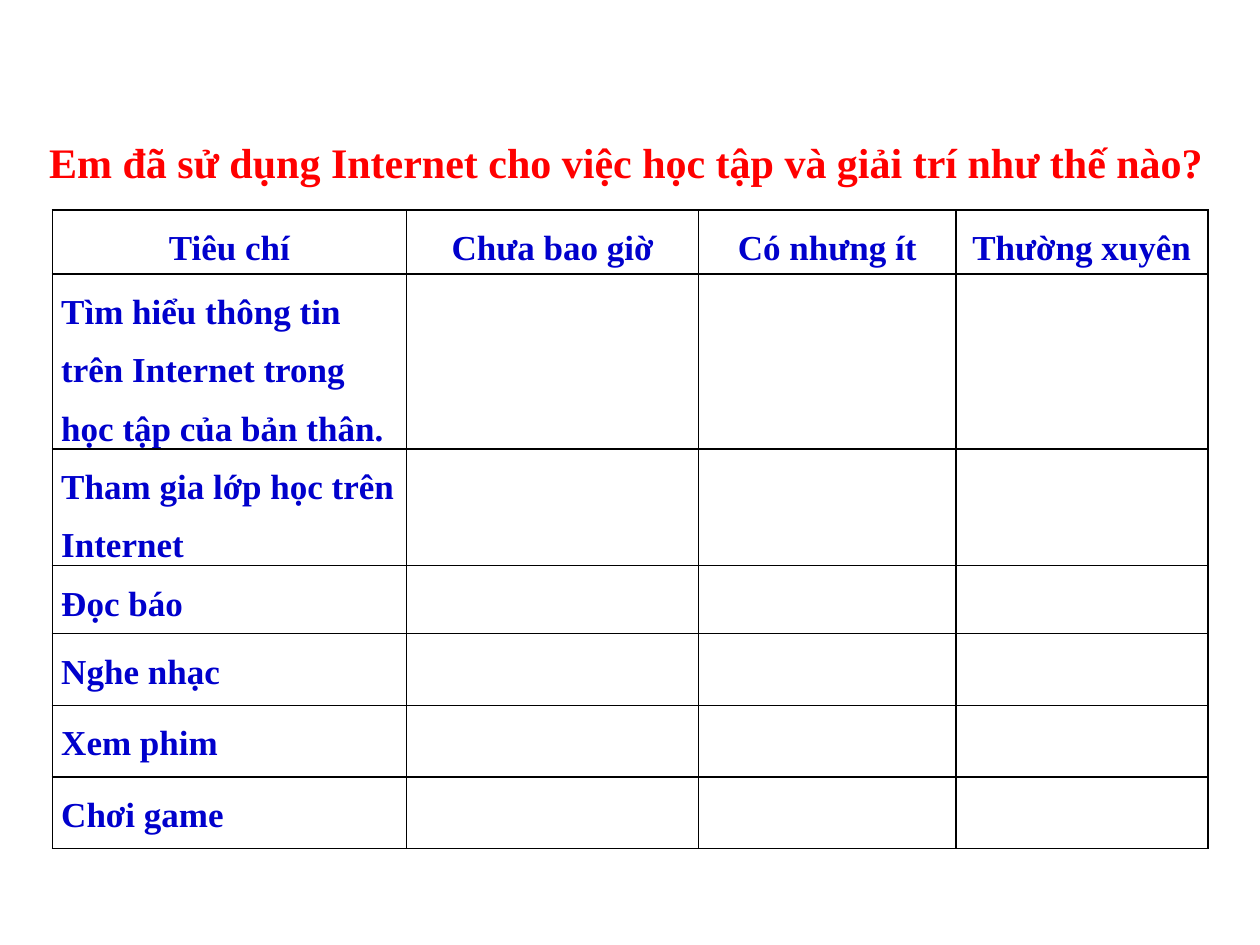
import pptx
import pptx.util
import pptx.dml.color
import pptx.enum.text
import pptx.oxml
import pptx.oxml.ns

Pt = pptx.util.Pt
Color = pptx.dml.color.RGBColor.from_string
Align = pptx.enum.text.PP_ALIGN

# Content
TITLE = "Em đã sử dụng Internet cho việc học tập và giải trí như thế nào?"
HEADS = ["Tiêu chí", "Chưa bao giờ", "Có nhưng ít", "Thường xuyên"]
ITEMS = [
    "Tìm hiểu thông tin trên Internet trong học tập của bản thân.",
    "Tham gia lớp học trên Internet",
    "Đọc báo",
    "Nghe nhạc",
    "Xem phim",
    "Chơi game",
]

# Look and sizes
THEME = {
    "font": "Times New Roman",
    "title": ("FF0000", 24),
    "cell": ("0000CC", 20),
    "line": "000000",
    "space": 1.5,
}
WIDTHS = [202.3, 167, 146.9, 144]
HEIGHTS = [36.6, 91.4, 54.7, 39, 41, 41, 41]
LEFT, TOP = 30, 120


def style(para, kind, align=Align.LEFT):
    color, size = THEME[kind]
    para.alignment = align
    para.line_spacing = THEME["space"]
    font = para.font
    font.name = THEME["font"]
    font.size = Pt(size)
    font.bold = True
    font.color.rgb = Color(color)


def frame(cell):
    """Draw a thin line on all four sides of a cell."""
    props = cell._tc.get_or_add_tcPr()
    for place, side in enumerate(["lnL", "lnR", "lnT", "lnB"]):
        props.insert(place, pptx.oxml.parse_xml(
            f'<a:{side} {pptx.oxml.ns.nsdecls("a")} w="{Pt(1)}">'
            f'<a:solidFill><a:srgbClr val="{THEME["line"]}"/></a:solidFill>'
            f'</a:{side}>'))


def add_grid(slide):
    rows = [HEADS] + [[item] + [""] * (len(HEADS) - 1) for item in ITEMS]
    table = slide.shapes.add_table(
        len(rows), len(HEADS), Pt(LEFT), Pt(TOP),
        Pt(sum(WIDTHS)), Pt(sum(HEIGHTS))).table
    table.first_row = table.horz_banding = False
    for col, width in zip(table.columns, WIDTHS):
        col.width = Pt(width)
    for row, height in zip(table.rows, HEIGHTS):
        row.height = Pt(height)
    for r, texts in enumerate(rows):
        for c, text in enumerate(texts):
            cell = table.cell(r, c)
            cell.fill.background()
            frame(cell)
            cell.margin_left = cell.margin_right = Pt(5)
            cell.margin_top = cell.margin_bottom = 0
            if text:
                cell.text = text
                style(cell.text_frame.paragraphs[0], "cell",
                      Align.LEFT if r else Align.CENTER)


def add_title(slide):
    box = slide.shapes.add_textbox(Pt(21), Pt(60), Pt(678), Pt(51))
    box.text_frame.word_wrap = True
    box.text_frame.text = TITLE
    style(box.text_frame.paragraphs[0], "title")


def main():
    deck = pptx.Presentation()
    deck.slide_width, deck.slide_height = Pt(720), Pt(540)
    slide = deck.slides.add_slide(deck.slide_layouts[6])
    add_grid(slide)
    add_title(slide)
    deck.save("out.pptx")


if __name__ == "__main__":
    main()
